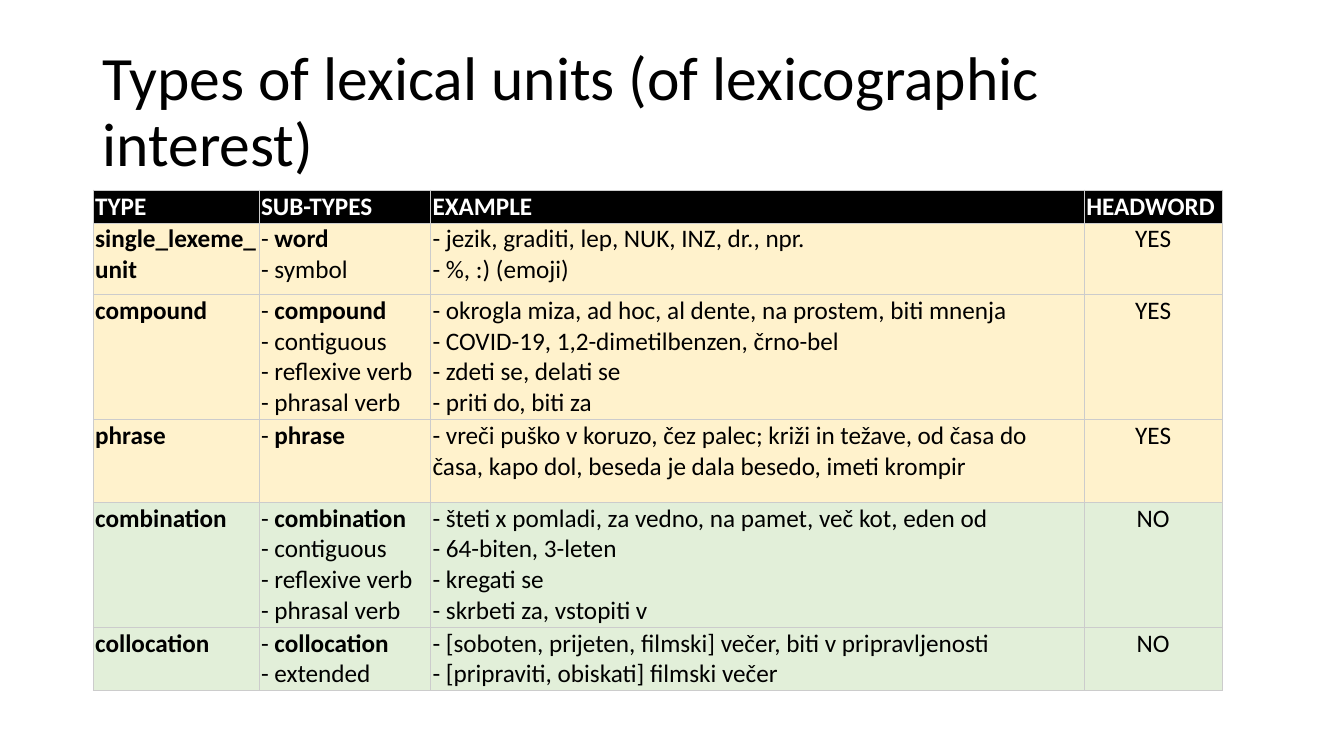
from lxml import etree
from pptx import Presentation
from pptx.dml.color import RGBColor
from pptx.enum.text import MSO_ANCHOR, MSO_AUTO_SIZE, PP_ALIGN
from pptx.oxml.ns import qn
from pptx.util import Pt

LEFT, CENTER = PP_ALIGN.LEFT, PP_ALIGN.CENTER
MIDDLE = MSO_ANCHOR.MIDDLE
NO_FIT = MSO_AUTO_SIZE.NONE

COLORS = {
    "black": "000000",
    "white": "FFFFFF",
    "yellow": "FFF2CC",
    "green": "E2EFD9",
    "border": "CCCCCC",
}
HEADINGS = ["TYPE", "SUB-TYPES", "EXAMPLE", "HEADWORD"]
VERB_TYPES = ["contiguous", "reflexive verb", "phrasal verb"]
UNITS = [
    ("single_lexeme_unit", ["word", "symbol"],
     ["jezik, graditi, lep, NUK, INZ, dr., npr.", "%, :) (emoji)"], "YES"),
    ("compound", ["compound", *VERB_TYPES],
     ["okrogla miza, ad hoc, al dente, na prostem, biti mnenja",
      "COVID-19, 1,2-dimetilbenzen, črno-bel",
      "zdeti se, delati se",
      "priti do, biti za"], "YES"),
    ("phrase", ["phrase"],
     ["vreči puško v koruzo, čez palec; križi in težave, od časa do časa, "
      "kapo dol, beseda je dala besedo, imeti krompir"], "YES"),
    ("combination", ["combination", *VERB_TYPES],
     ["šteti x pomladi, za vedno, na pamet, več kot, eden od",
      "64-biten, 3-leten",
      "kregati se",
      "skrbeti za, vstopiti v"], "NO"),
    ("collocation", ["collocation", "extended"],
     ["[soboten, prijeten, filmski] večer, biti v pripravljenosti",
      "[pripraviti, obiskati] filmski večer"], "NO"),
]
ROW_FILLS = {"YES": "yellow", "NO": "green"}
COLUMN_WIDTHS = [118.5, 122.5, 467, 98.5]
ROW_HEIGHTS = [23, 51, 89, 59, 89, 45]


class SlideBuilder:
    """Adds consistently styled elements to one slide."""

    font_name = "Calibri"

    def __init__(self, slide):
        self.slide = slide

    def style(self, paragraph, size, color, bold=False, align=LEFT):
        font = paragraph.font
        font.name, font.size, font.bold = self.font_name, Pt(size), bold
        font.color.rgb = RGBColor.from_string(COLORS[color])
        paragraph.alignment = align

    def title(self, text, left, top, width, height):
        box = self.slide.shapes.title
        box.left, box.top = Pt(left), Pt(top)
        box.width, box.height = Pt(width), Pt(height)
        frame = box.text_frame
        frame.text = text
        frame.word_wrap = True
        frame.auto_size = NO_FIT
        frame.vertical_anchor = MIDDLE
        paragraph = frame.paragraphs[0]
        paragraph.line_spacing = 0.9
        self.style(paragraph, 44, "black")

    def table(self, left, top, widths, heights):
        table = self.slide.shapes.add_table(
            len(heights), len(widths), Pt(left), Pt(top),
            Pt(sum(widths)), Pt(sum(heights))).table
        table.horz_banding = False
        for column, width in zip(table.columns, widths):
            column.width = Pt(width)
        for row, height in zip(table.rows, heights):
            row.height = Pt(height)
        return table

    def borders(self, cell):
        properties = cell._tc.get_or_add_tcPr()
        for side in ("a:lnL", "a:lnR", "a:lnT", "a:lnB"):
            line = etree.SubElement(properties, qn(side), w=str(Pt(0.5)))
            fill = etree.SubElement(line, qn("a:solidFill"))
            etree.SubElement(fill, qn("a:srgbClr"), val=COLORS["border"])

    def cell(self, cell, lines, fill, color="black", bold=False, align=LEFT):
        self.borders(cell)
        cell.fill.solid()
        cell.fill.fore_color.rgb = RGBColor.from_string(COLORS[fill])
        cell.margin_left = cell.margin_right = Pt(1.5)
        cell.margin_top = cell.margin_bottom = Pt(0.75)
        paragraph = cell.text_frame.paragraphs[0]
        paragraph.text = "\v".join(lines)
        self.style(paragraph, 18, color, bold, align)

    def subtypes(self, cell, names, fill):
        main, *others = names
        self.cell(cell, ["- "], fill)
        paragraph = cell.text_frame.paragraphs[0]
        span = paragraph.add_run()
        span.text = main
        span.font.bold = True
        for name in others:
            paragraph.add_line_break()
            paragraph.add_run().text = f"- {name}"


def main():
    deck = Presentation()
    deck.slide_width, deck.slide_height = Pt(960), Pt(540)
    page = SlideBuilder(deck.slides.add_slide(deck.slide_layouts[5]))
    page.title("Types of lexical units (of lexicographic interest)",
               66, 28.75, 839, 104.5)
    table = page.table(66.5, 135.75, COLUMN_WIDTHS, ROW_HEIGHTS)
    for index, heading in enumerate(HEADINGS):
        page.cell(table.cell(0, index), [heading], "black", "white", bold=True)
    for row, (unit, subtypes, examples, headword) in enumerate(UNITS, start=1):
        fill = ROW_FILLS[headword]
        page.cell(table.cell(row, 0), [unit], fill, bold=True)
        page.subtypes(table.cell(row, 1), subtypes, fill)
        page.cell(table.cell(row, 2), [f"- {text}" for text in examples], fill)
        page.cell(table.cell(row, 3), [headword], fill, align=CENTER)
    deck.save("out.pptx")


if __name__ == "__main__":
    main()
